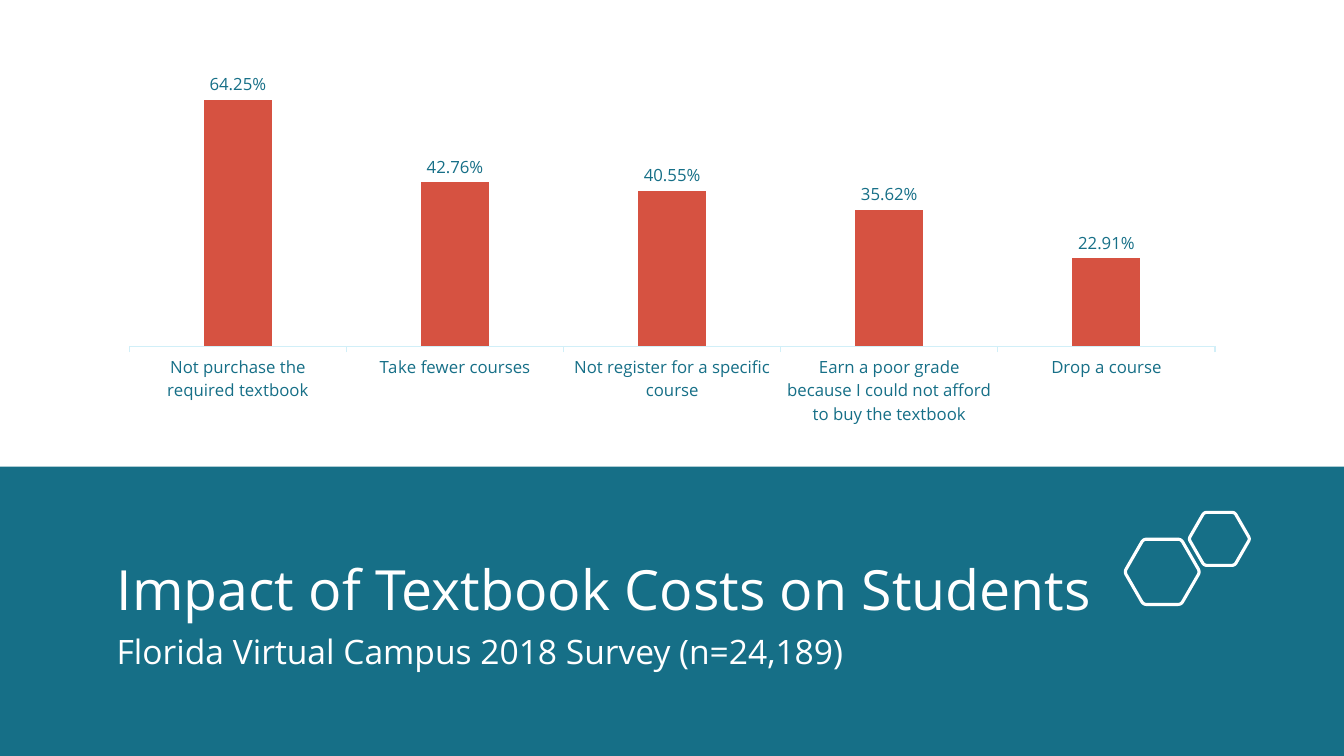
from itertools import chain
from math import cos, pi, sin

from pptx import Presentation
from pptx.chart.data import CategoryChartData
from pptx.dml.color import RGBColor
from pptx.enum.chart import XL_CHART_TYPE as ChartType
from pptx.enum.chart import XL_LABEL_POSITION as LabelPosition
from pptx.enum.chart import XL_TICK_MARK as TickMark
from pptx.enum.shapes import MSO_SHAPE as Shape
from pptx.enum.text import MSO_ANCHOR as Anchor
from pptx.util import Cm, Pt

SURVEY_RESULTS = {
    "Not purchase the required textbook": 0.6425,
    "Take fewer courses": 0.4276,
    "Not register for a specific course": 0.4055,
    "Earn a poor grade because I could not afford to buy the textbook": 0.3562,
    "Drop a course": 0.2291,
}


def color(hex_string):
    return RGBColor.from_string(hex_string)


def rounded_hexagon(center_x, center_y, radius, cut=0.09, steps=6):
    """Return outline points in cm, each corner rounded by a quadratic curve."""
    corners = [(center_x + radius * cos(i * pi / 3), center_y + radius * sin(i * pi / 3))
               for i in range(6)]

    def toward(start, end):
        return tuple(a + cut * (b - a) for a, b in zip(start, end))

    def bend(i):
        corner = corners[i]
        entry = toward(corner, corners[i - 1])
        leave = toward(corner, corners[(i + 1) % 6])
        for step in range(steps + 1):
            t = step / steps
            yield tuple((1 - t) ** 2 * a + 2 * t * (1 - t) * b + t * t * c
                        for a, b, c in zip(entry, corner, leave))

    return list(chain.from_iterable(bend(i) for i in range(6)))


class SurveySlide:
    FONT = "Open Sans"
    TEAL = "166F87"
    RED = "D65241"
    PALE_BLUE = "D1EFF8"
    WHITE = "FFFFFF"
    PERCENT = "0.00%"

    def __init__(self, presentation):
        self.slide = presentation.slides.add_slide(presentation.slide_layouts[6])
        self.shapes = self.slide.shapes
        background = self.slide.background.fill
        background.solid()
        background.fore_color.rgb = color(self.WHITE)

    def style_font(self, font, size, hex_string):
        font.name = self.FONT
        font.size = Pt(size)
        font.color.rgb = color(hex_string)

    def add_band(self, left, top, width, height):
        band = self.shapes.add_shape(Shape.RECTANGLE, Cm(left), Cm(top), Cm(width), Cm(height))
        band.shadow.inherit = False
        band.fill.solid()
        band.fill.fore_color.rgb = color(self.TEAL)
        band.line.fill.background()

    def add_text(self, text, left, top, width, height, size, anchor=Anchor.TOP):
        box = self.shapes.add_textbox(Cm(left), Cm(top), Cm(width), Cm(height))
        frame = box.text_frame
        frame.word_wrap = True
        frame.vertical_anchor = anchor
        paragraph = frame.paragraphs[0]
        paragraph.line_spacing = 0.9
        run = paragraph.add_run()
        run.text = text
        self.style_font(run.font, size, self.WHITE)

    def add_hexagons(self, *hexagons):
        group = self.shapes.add_group_shape()
        for center_x, center_y, radius in hexagons:
            points = [(Cm(x), Cm(y)) for x, y in rounded_hexagon(center_x, center_y, radius)]
            builder = group.shapes.build_freeform(*points[0])
            builder.add_line_segments(points[1:], close=True)
            hexagon = builder.convert_to_shape()
            hexagon.shadow.inherit = False
            hexagon.fill.background()
            hexagon.line.color.rgb = color(self.WHITE)
            hexagon.line.width = Pt(2.25)

    def add_column_chart(self, results, left, top, width, height):
        data = CategoryChartData(number_format=self.PERCENT)
        data.categories = list(results)
        data.add_series("Series 1", list(results.values()))
        chart = self.shapes.add_chart(ChartType.COLUMN_CLUSTERED, Cm(left), Cm(top),
                                      Cm(width), Cm(height), data).chart
        chart.has_title = False
        chart.has_legend = False
        self.style_font(chart.font, 10, self.TEAL)

        value_axis = chart.value_axis
        value_axis.minimum_scale = 0
        value_axis.maximum_scale = 0.7
        value_axis.has_major_gridlines = False
        value_axis.visible = False

        category_axis = chart.category_axis
        category_axis.major_tick_mark = TickMark.OUTSIDE
        category_axis.format.line.color.rgb = color(self.PALE_BLUE)
        category_axis.format.line.width = Pt(0.75)
        self.style_font(category_axis.tick_labels.font, 12, self.TEAL)

        plot = chart.plots[0]
        plot.vary_by_categories = False
        plot.gap_width = 219
        plot.overlap = -27
        series = plot.series[0]
        series.format.fill.solid()
        series.format.fill.fore_color.rgb = color(self.RED)

        labels = series.data_labels
        labels.show_value = True
        labels.position = LabelPosition.OUTSIDE_END
        labels.number_format = self.PERCENT
        labels.number_format_is_linked = False
        self.style_font(labels.font, 12, self.TEAL)


def main():
    presentation = Presentation()
    presentation.slide_width = Cm(33.87)
    presentation.slide_height = Cm(19.05)

    survey = SurveySlide(presentation)
    survey.add_band(0, 11.76, 33.87, 7.29)
    survey.add_text("Impact of Textbook Costs on Students",
                    2.69, 12.29, 25.68, 3.53, 39.6, Anchor.BOTTOM)
    survey.add_text("Florida Virtual Campus 2018 Survey (n=24,189)",
                    2.69, 15.9, 23.65, 1.19, 24)
    survey.add_hexagons((29.29, 14.41, 0.95), (30.73, 13.58, 0.77))
    survey.add_column_chart(SURVEY_RESULTS, 2.69, 1.78, 28.5, 9.12)

    presentation.save("out.pptx")


if __name__ == "__main__":
    main()
